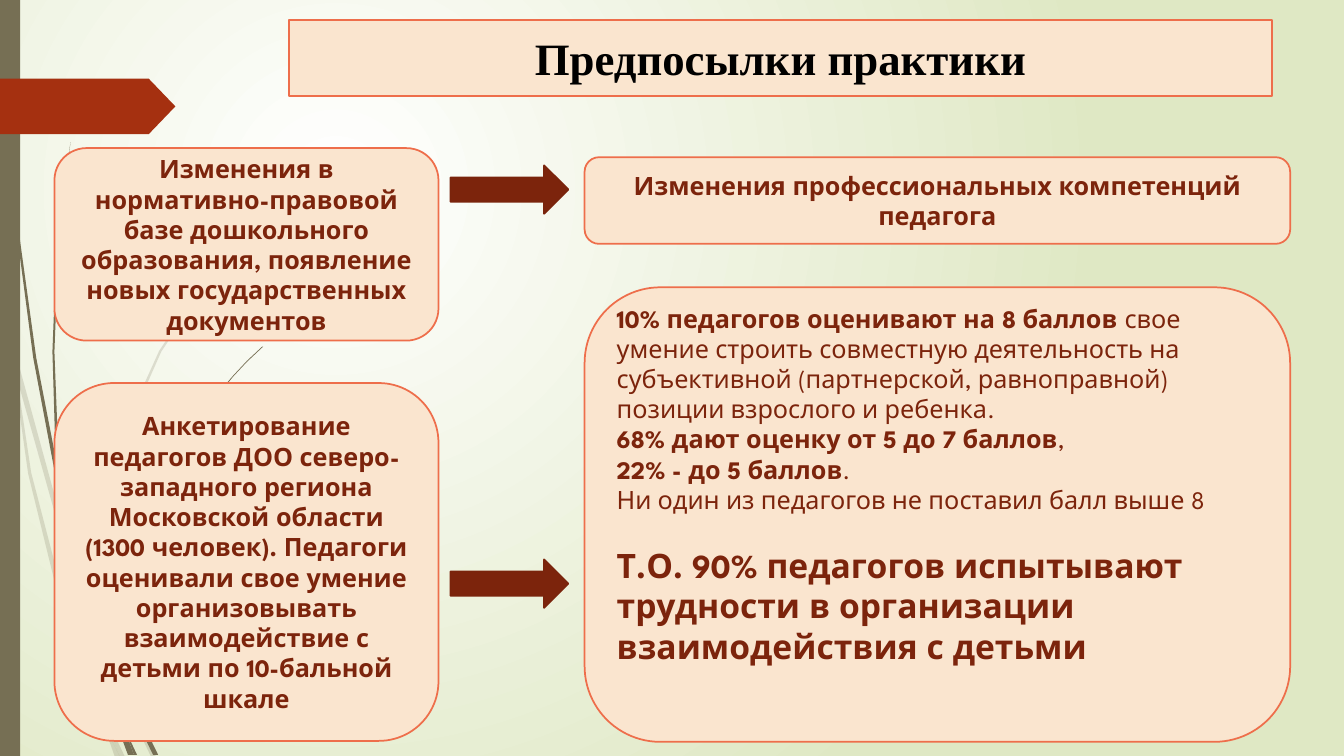
from lxml.etree import SubElement
from pptx import Presentation
from pptx.dml.color import RGBColor
from pptx.enum.shapes import MSO_SHAPE
from pptx.enum.text import MSO_ANCHOR, MSO_AUTO_SIZE, PP_ALIGN
from pptx.oxml.ns import qn
from pptx.util import Pt

OLIVE, RUST, BROWN = "766F54", "A53010", "7C240C"
CREAM, CORAL, BLACK = "FAE5CF", "EE6E4B", "000000"
GRASS_UNIT = Pt(0.72)  # grass outlines use a grid of 0.72 points

PALE_GRASS = [
    [(11, 350), (9, 322), (0, 282), (0, 299), (10, 344)],
    [(58, 522), (84, 599), (85, 586), (62, 520), (14, 345), (17, 376)],
    [(92, 607), (88, 596), (88, 610), (123, 694), (150, 751), (155, 751), (127, 692)],
    [(119, 751), (124, 751), (105, 711)],
    [(93, 683), (70, 619), (31, 469), (17, 376), (11, 350), (28, 470), (65, 621),
     (92, 693), (101, 714), (99, 707)],
    [(88, 584), (110, 462), (160, 349), (229, 245), (268, 198), (290, 175), (312, 154),
     (312, 153), (289, 175), (268, 197), (228, 244), (158, 348), (107, 461), (85, 584),
     (85, 586), (88, 596)],
    [(101, 714), (114, 751), (119, 751)],
    [(96, 692), (93, 683), (99, 707), (101, 714), (119, 751), (105, 711)],
]
DARK_GRASS = [
    [(7, 110), (17, 233), (33, 355), (56, 477), (57, 481), (55, 457), (55, 453), (36, 355),
     (19, 232), (8, 109), (5, 48), (4, 0), (3, 0), (4, 48)],
    [(113, 649), (110, 641), (111, 656), (132, 708), (152, 749), (157, 749), (136, 706)],
    [(60, 472), (58, 453), (54, 349), (58, 245), (63, 193), (70, 141), (62, 193), (56, 245),
     (52, 349), (55, 449)],
    [(133, 749), (136, 749), (122, 719)],
    [(57, 477), (64, 505), (60, 472), (55, 449), (55, 453)],
    [(111, 633), (125, 552), (158, 476), (205, 406), (231, 374), (245, 359), (261, 344),
     (260, 344), (245, 358), (231, 373), (204, 405), (156, 474), (122, 551), (106, 631),
     (110, 641)],
    [(117, 722), (127, 749), (131, 749)],
    [(116, 706), (110, 691), (116, 717), (117, 722), (130, 749), (133, 749), (122, 719)],
]


def color(hex_string):
    return RGBColor.from_string(hex_string)


class SlideBuilder:
    body_font = "League Spartan"
    title_font = "Times New Roman"
    line_width = Pt(1.25)

    def __init__(self, slide):
        self.slide = slide

    def background(self, inner, outer):
        fill = self.slide.background.fill
        fill.gradient()
        for stop, shade in zip(fill.gradient_stops, (inner, outer)):
            stop.color.rgb = color(shade)
        fill.gradient_stops[0].position = 0
        fill.gradient_stops[1].position = 1
        gradient = self.slide.element.find(".//" + qn("a:gradFill"))
        gradient.remove(gradient.find(qn("a:lin")))
        circle = SubElement(gradient, qn("a:path"), {"path": "circle"})
        SubElement(circle, qn("a:fillToRect"), l="50000", t="50000", r="100000", b="100000")

    def paint(self, shape, fill, line=None):
        shape.fill.solid()
        shape.fill.fore_color.rgb = color(fill)
        if line:
            shape.line.color.rgb = color(line)
            shape.line.width = self.line_width
        else:
            shape.line.fill.background()

    def grass(self, outline, alpha=None):
        builder = self.slide.shapes.build_freeform(*outline[0], scale=GRASS_UNIT)
        builder.add_line_segments(outline[1:], close=True)
        shape = builder.convert_to_shape()
        shape.shadow.inherit = False
        self.paint(shape, OLIVE)
        if alpha:
            tone = shape.element.spPr.find(".//" + qn("a:srgbClr"))
            SubElement(tone, qn("a:alpha"), val=str(alpha * 1000))

    def shape(self, kind, left, top, width, height, fill, line=None):
        shape = self.slide.shapes.add_shape(kind, Pt(left), Pt(top), Pt(width), Pt(height))
        shape.shadow.inherit = False
        self.paint(shape, fill, line)
        return shape

    def run(self, paragraph, text, size, bold, font, shade):
        run = paragraph.add_run()
        run.text = text
        run.font.size = Pt(size)
        run.font.bold = bold
        run.font.name = font
        run.font.color.rgb = color(shade)

    def title(self, text, left, top, width, height):
        shape = self.slide.shapes.title
        shape.left, shape.top, shape.width, shape.height = map(Pt, (left, top, width, height))
        self.paint(shape, CREAM, CORAL)
        frame = shape.text_frame
        frame.auto_size = MSO_AUTO_SIZE.NONE
        frame.vertical_anchor = MSO_ANCHOR.MIDDLE
        paragraph = frame.paragraphs[0]
        paragraph.alignment = PP_ALIGN.CENTER
        self.run(paragraph, text, 32, True, self.title_font, BLACK)

    def card(self, left, top, width, height, paragraphs, alignment=PP_ALIGN.CENTER):
        """Each paragraph is (size, space before, [(text, bold), ...])."""
        shape = self.shape(MSO_SHAPE.ROUNDED_RECTANGLE, left, top, width, height, CREAM, CORAL)
        frame = shape.text_frame
        frame.word_wrap = True
        frame.vertical_anchor = MSO_ANCHOR.MIDDLE
        for index, (size, space, runs) in enumerate(paragraphs):
            paragraph = frame.add_paragraph() if index else frame.paragraphs[0]
            paragraph.alignment = alignment
            paragraph.space_before = Pt(space)
            for text, bold in runs:
                self.run(paragraph, text, size, bold, self.body_font, BROWN)
        return shape


def main():
    presentation = Presentation()
    presentation.slide_width, presentation.slide_height = Pt(960), Pt(540)
    builder = SlideBuilder(presentation.slides.add_slide(presentation.slide_layouts[5]))

    # Backdrop
    builder.background("FFFFFF", "DFE8C4")
    for outline in PALE_GRASS:
        builder.grass(outline, alpha=20)
    for outline in DARK_GRASS:
        builder.grass(outline)
    builder.shape(MSO_SHAPE.RECTANGLE, 0, 0, 14.4, 540, OLIVE)
    marker = builder.shape(MSO_SHAPE.PENTAGON, 0, 56.2, 125.3, 39.6, RUST)
    marker.adjustments[0] = 0.48

    # Title
    builder.title("Предпосылки практики", 206.6, 14.4, 702, 54)

    # Causes on the left
    left, width = 38.9, 274.3
    builder.card(left, 105.8, width, 137.5, [(18, 0, [(
        "Изменения в нормативно-правовой базе дошкольного образования, "
        "появление новых государственных документов", True)])])
    builder.card(left, 273.6, width, 255.6, [(18, 0, [(
        "Анкетирование педагогов ДОО северо-западного региона Московской области "
        "(1300 человек). Педагоги оценивали свое умение организовывать "
        "взаимодействие с детьми по 10-бальной шкале", True)])])

    # Results on the right
    left, width = 417.6, 504
    builder.card(left, 112.3, width, 61.9, [
        (18, 0, [("Изменения профессиональных компетенций педагога", True)])])
    findings = builder.card(left, 205.2, width, 324.7, [
        (18, 0, [("10% педагогов оценивают на 8 баллов ", True),
                 ("свое умение строить совместную деятельность на субъективной "
                  "(партнерской, равноправной) позиции взрослого и ребенка.", False)]),
        (18, 0, [("68% дают оценку от 5 до 7 баллов", True), (",", False)]),
        (18, 0, [("22% - до 5 баллов", True), (".", False)]),
        (18, 0, [("Ни один из педагогов не поставил балл выше 8", False)]),
        (24, 21.6, [("Т.О. 90% педагогов испытывают трудности в организации "
                     "взаимодействия с детьми", True)]),
    ], PP_ALIGN.LEFT)
    findings.text_frame.margin_bottom = Pt(46.8)

    # Arrows from causes to results
    for top in (118.1, 399.6):
        builder.shape(MSO_SHAPE.RIGHT_ARROW, 321.8, top, 84.2, 34.6, BROWN, "7A240C")

    presentation.save("out.pptx")


if __name__ == "__main__":
    main()
